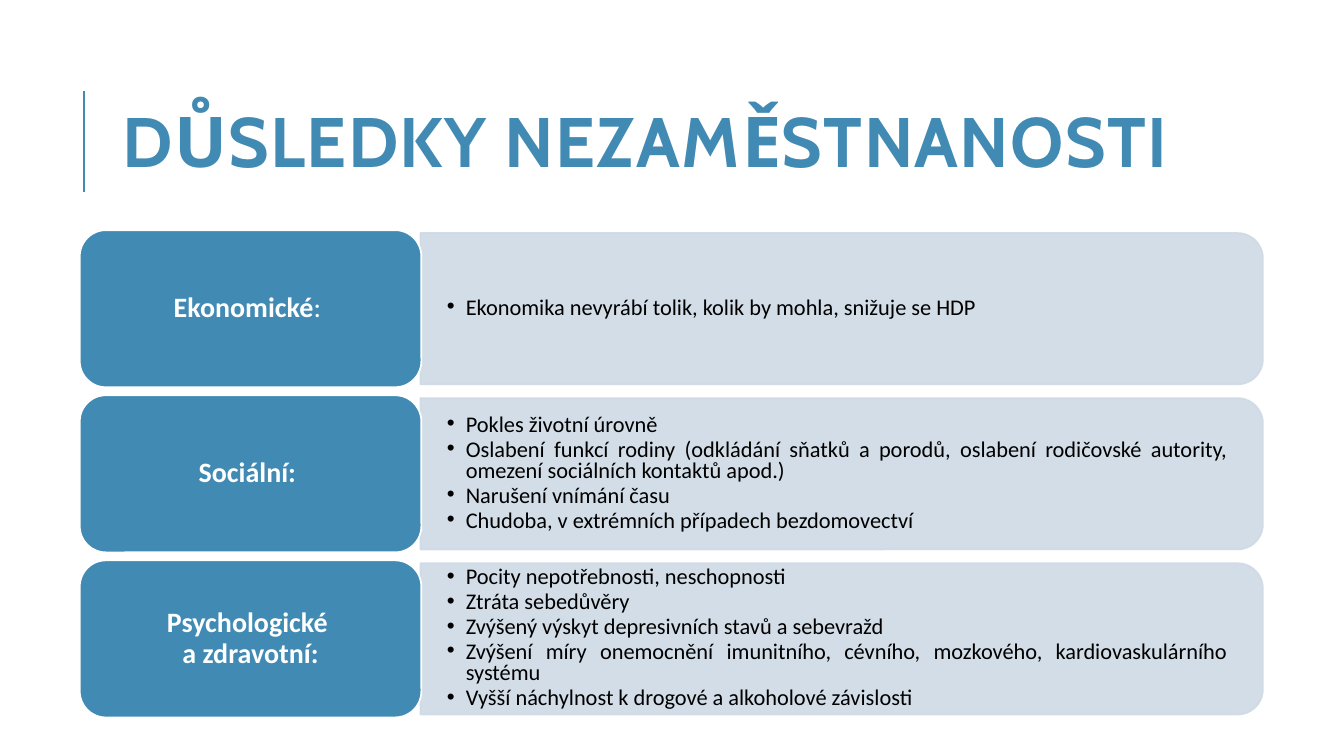
"""Build a slide on the consequences of unemployment."""
from lxml.etree import SubElement
from pptx import Presentation
from pptx.dml.color import RGBColor
from pptx.enum.shapes import MSO_CONNECTOR, MSO_SHAPE
from pptx.enum.text import MSO_ANCHOR, PP_ALIGN
from pptx.oxml.ns import qn
from pptx.util import Cm, Pt

BLUE = RGBColor(0x41, 0x8A, 0xB3)
PALE = RGBColor(0xCF, 0xDA, 0xE5)
WHITE = RGBColor(0xFF, 0xFF, 0xFF)
BLACK = RGBColor(0x00, 0x00, 0x00)

ROWS = [
    ([("Ekonomické", ": ")],
     ["Ekonomika nevyrábí tolik, kolik by mohla, snižuje se HDP"]),
    ([("Sociální: ", "")],
     ["Pokles životní úrovně",
      "Oslabení funkcí rodiny (odkládání sňatků a porodů, oslabení rodičovské "
      "autority, omezení sociálních kontaktů apod.)",
      "Narušení vnímání času",
      "Chudoba, v extrémních případech bezdomovectví"]),
    ([("Psychologické ", ""), ("a zdravotní:", "")],
     ["Pocity nepotřebnosti, neschopnosti",
      "Ztráta sebedůvěry",
      "Zvýšený výskyt depresivních stavů a sebevražd",
      "Zvýšení míry onemocnění imunitního, cévního, mozkového, "
      "kardiovaskulárního systému",
      "Vyšší náchylnost k drogové a alkoholové závislosti"]),
]
FIRST_CENTER, ROW_PITCH = 7.78, 4.16
LABEL_LEFT, LABEL_WIDTH, LABEL_HEIGHT = 2.01, 8.61, 3.96
PANEL_CENTER, PANEL_LENGTH, PANEL_DEPTH = 21.21, 21.23, 3.81
TEXT_LEFT, TEXT_WIDTH, TEXT_HEIGHT = 10.57, 21.06, 3.43


def style_shape(shape, fill_color, line_color):
    shape.shadow.inherit = False
    shape.fill.solid()
    shape.fill.fore_color.rgb = fill_color
    shape.line.color.rgb = line_color
    shape.line.width = Pt(1.25)


def style_frame(text_frame, side, edge):
    text_frame.word_wrap = True
    text_frame.vertical_anchor = MSO_ANCHOR.MIDDLE
    text_frame.margin_left = text_frame.margin_right = Cm(side)
    text_frame.margin_top = text_frame.margin_bottom = Cm(edge)


presentation = Presentation()
presentation.slide_width, presentation.slide_height = Cm(33.87), Cm(19.05)
slide = presentation.slides.add_slide(presentation.slide_layouts[5])

rule = slide.shapes.add_connector(
    MSO_CONNECTOR.STRAIGHT, Cm(2.12), Cm(4.83), Cm(2.12), Cm(2.29))
rule.line.color.rgb = BLUE
rule.line.width = Pt(1.5)
SubElement(rule._element.spPr, qn("a:effectLst"))

title = slide.shapes.title
title.left, title.top, title.width, title.height = Cm(2.84), Cm(1.63), Cm(27), Cm(4.17)
title.text_frame.text = "DŮSLEDKY NEZAMĚSTNANOSTI"
style_frame(title.text_frame, 0.25, 0.13)
paragraph = title.text_frame.paragraphs[0]
paragraph.alignment = PP_ALIGN.LEFT
paragraph.line_spacing = 0.8
run = paragraph.runs[0]
run.font.name, run.font.size, run.font.bold = "Cabin", Pt(50), True
run.font.color.rgb = BLUE
run._r.get_or_add_rPr().set("spc", "100")

for row, (label_lines, effects) in enumerate(ROWS):
    center = FIRST_CENTER + row * ROW_PITCH

    panel = slide.shapes.add_shape(
        MSO_SHAPE.ROUND_2_SAME_RECTANGLE,
        Cm(PANEL_CENTER - PANEL_DEPTH / 2), Cm(center - PANEL_LENGTH / 2),
        Cm(PANEL_DEPTH), Cm(PANEL_LENGTH))
    panel.rotation = 90
    style_shape(panel, PALE, PALE)
    for color in panel._element.spPr.iter(qn("a:srgbClr")):
        SubElement(color, qn("a:alpha"), val="90000")

    effects_box = slide.shapes.add_textbox(
        Cm(TEXT_LEFT), Cm(center - TEXT_HEIGHT / 2), Cm(TEXT_WIDTH), Cm(TEXT_HEIGHT))
    effects_box.text_frame.text = "\n".join(effects)
    style_frame(effects_box.text_frame, 0.69, 0.36)
    for paragraph in effects_box.text_frame.paragraphs:
        paragraph.level = 1
        paragraph.alignment = PP_ALIGN.JUSTIFY
        paragraph.line_spacing = 0.8
        paragraph.space_after = Pt(2.4)
        properties = paragraph._p.get_or_add_pPr()
        properties.set("marL", str(Cm(0.48)))
        properties.set("indent", str(-Cm(0.48)))
        SubElement(properties, qn("a:buFont"), typeface="Arial")
        SubElement(properties, qn("a:buChar"), char="•")
        font = paragraph.runs[0].font
        font.name, font.size = "Calibri", Pt(16)
        font.color.rgb = BLACK

    label = slide.shapes.add_shape(
        MSO_SHAPE.ROUNDED_RECTANGLE, Cm(LABEL_LEFT), Cm(center - LABEL_HEIGHT / 2),
        Cm(LABEL_WIDTH), Cm(LABEL_HEIGHT))
    style_shape(label, BLUE, WHITE)
    label.text_frame.text = "\n".join(bold for bold, plain in label_lines)
    style_frame(label.text_frame, 0.2, 0.1)
    for paragraph, (bold, plain) in zip(label.text_frame.paragraphs, label_lines):
        paragraph.alignment = PP_ALIGN.CENTER
        paragraph.line_spacing = 0.9
        paragraph.runs[0].font.bold = True
        if plain:
            paragraph.add_run().text = plain
        for run in paragraph.runs:
            run.font.name, run.font.size = "Calibri", Pt(20)
            run.font.color.rgb = WHITE

presentation.save("out.pptx")
